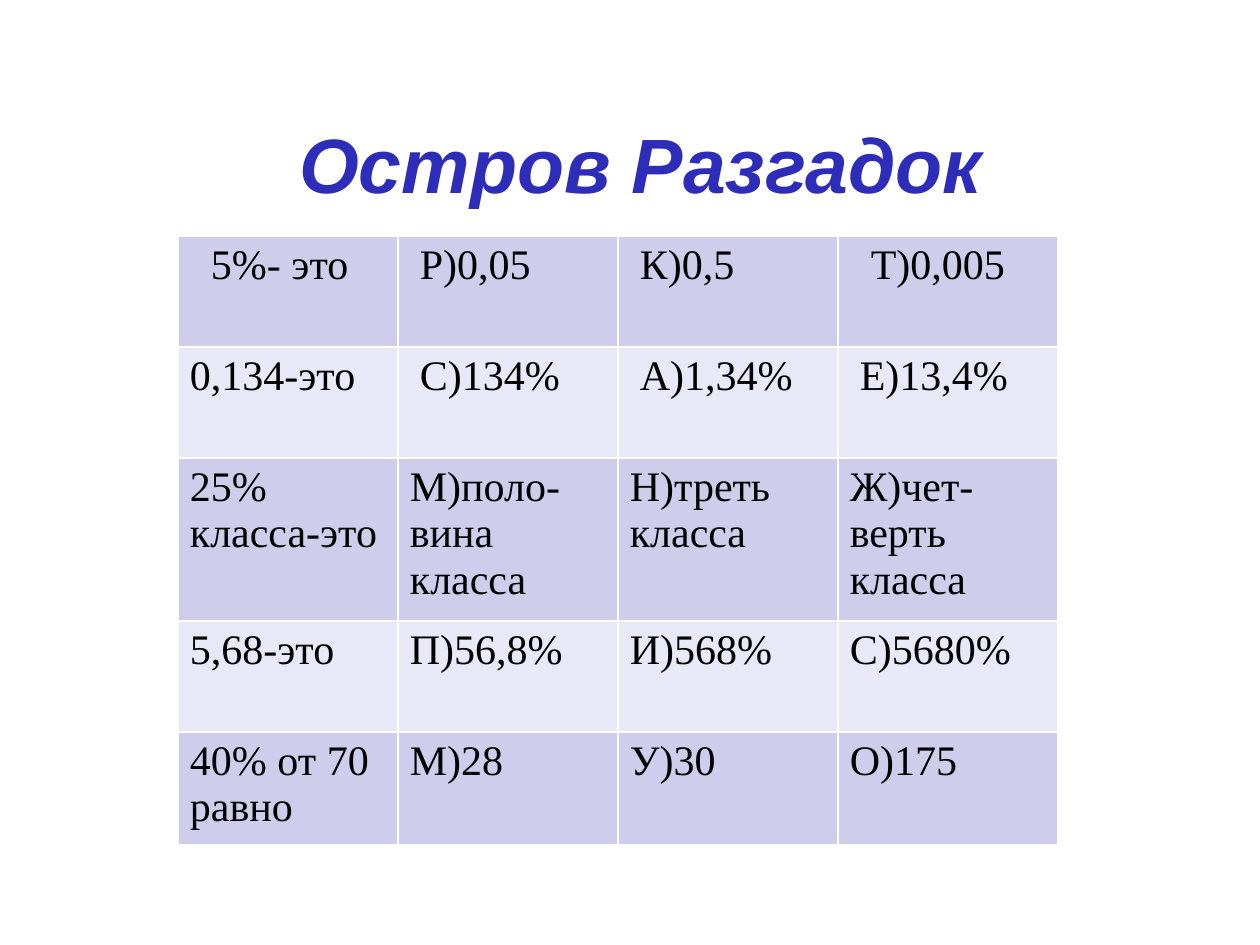
from dataclasses import dataclass

from lxml.etree import SubElement
from pptx import Presentation
from pptx.dml.color import RGBColor
from pptx.enum.text import MSO_ANCHOR, PP_ALIGN
from pptx.oxml.ns import qn
from pptx.util import Emu, Pt

PIXELS_PER_INCH = 126
EMU_PER_INCH = 914400


@dataclass(frozen=True)
class Theme:
    title_font: str = "Arial"
    table_font: str = "Times New Roman"
    title_size: int = 44
    table_size: int = 24
    title_color: str = "2D2DB9"
    text_color: str = "000000"
    border_color: str = "FFFFFF"
    border_width: int = 1
    row_fills: tuple = ("CECEEC", "E8E8F6")


QUIZ_ROWS = (
    ("5%- это", "Р)0,05", "К)0,5", "Т)0,005"),
    ("0,134-это", "С)134%", "А)1,34%", "Е)13,4%"),
    ("25%\nкласса-это", "М)поло-\nвина класса", "Н)треть класса", "Ж)чет-\nверть класса"),
    ("5,68-это", "П)56,8%", "И)568%", "С)5680%"),
    ("40% от 70 равно", "М)28", "У)30", "О)175"),
)
QUIZ_INDENTS = ((21, 10, 10, 21), (0, 10, 10, 10)) + ((0, 0, 0, 0),) * 3


def px(length):
    return Emu(round(length * EMU_PER_INCH / PIXELS_PER_INCH))


def write_text(frame, text, *, font, size, color, bold=False, italic=False,
               align=PP_ALIGN.LEFT, shadow=False):
    frame.word_wrap = True
    for index, line in enumerate(text.split("\n")):
        para = frame.add_paragraph() if index else frame.paragraphs[0]
        para.alignment = align
        span = para.add_run()
        span.text = line
        span.font.name = font
        span.font.size = Pt(size)
        span.font.bold = bold
        span.font.italic = italic
        span.font.color.rgb = RGBColor.from_string(color)
        if shadow:
            add_text_shadow(span)


def add_text_shadow(span):
    properties = span._r.get_or_add_rPr()
    effects = SubElement(properties, qn("a:effectLst"))
    properties.find(qn("a:solidFill")).addnext(effects)
    outer = SubElement(effects, qn("a:outerShdw"), dist="35921", dir="2700000")
    SubElement(outer, qn("a:srgbClr"), val="000000")


class SlideBuilder:
    def __init__(self, slide, theme):
        self.slide = slide
        self.theme = theme

    def title(self, text, left, top, width, height, indent):
        box = self.slide.shapes.add_textbox(px(left), px(top), px(width), px(height))
        frame = box.text_frame
        frame.vertical_anchor = MSO_ANCHOR.MIDDLE
        frame.margin_left = px(13 + indent)
        frame.margin_right = px(13)
        write_text(frame, text, font=self.theme.title_font, size=self.theme.title_size,
                   color=self.theme.title_color, bold=True, italic=True,
                   align=PP_ALIGN.CENTER, shadow=True)

    def table(self, rows, indents, left, top, column_width, row_height):
        column_count = len(rows[0])
        table = self.slide.shapes.add_table(
            len(rows), column_count, px(left), px(top),
            px(column_width * column_count), px(row_height * len(rows))).table
        table.first_row = False
        table.horz_banding = False
        for column in table.columns:
            column.width = px(column_width)
        for row_index, texts in enumerate(rows):
            table.rows[row_index].height = px(row_height)
            fill = self.theme.row_fills[row_index % 2]
            for column_index, text in enumerate(texts):
                self.cell(table.cell(row_index, column_index), text, fill,
                          indents[row_index][column_index])

    def cell(self, cell, text, fill, indent):
        cell.margin_left = px(12 + indent)
        cell.margin_right = px(12)
        cell.margin_top = cell.margin_bottom = px(6)
        write_text(cell.text_frame, text, font=self.theme.table_font,
                   size=self.theme.table_size, color=self.theme.text_color)
        properties = cell._tc.get_or_add_tcPr()
        for side in ("lnL", "lnR", "lnT", "lnB"):
            border = SubElement(properties, qn(f"a:{side}"), w=str(Pt(self.theme.border_width)))
            paint = SubElement(border, qn("a:solidFill"))
            SubElement(paint, qn("a:srgbClr"), val=self.theme.border_color)
        cell.fill.solid()
        cell.fill.fore_color.rgb = RGBColor.from_string(fill)


def main():
    deck = Presentation()
    deck.slide_width = px(1260)
    deck.slide_height = px(945)
    page = SlideBuilder(deck.slides.add_slide(deck.slide_layouts[6]), Theme())
    page.title("Остров Разгадок", 95, 84, 1071, 158, indent=21)
    page.table(QUIZ_ROWS, QUIZ_INDENTS, 178, 236, column_width=220, row_height=111)
    deck.save("out.pptx")


if __name__ == "__main__":
    main()
